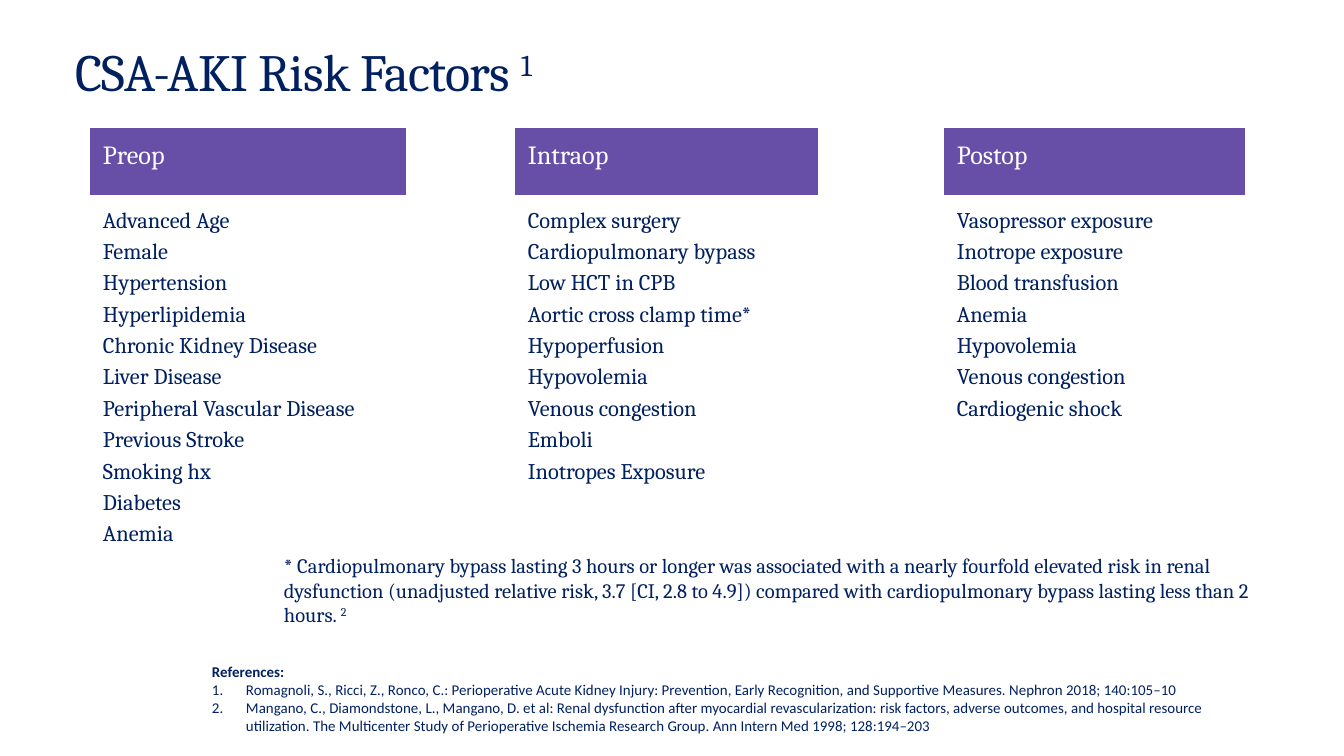
from lxml.etree import SubElement
from pptx import Presentation
from pptx.dml.color import RGBColor
from pptx.enum.text import MSO_ANCHOR
from pptx.oxml.ns import qn
from pptx.util import Pt

NAVY, PURPLE, WHITE = "002060", "674EA7", "FFFFFF"
SCALE = 914400 / 134.4
NO_STYLE = "{2D5ABB26-0587-4C30-8999-92F81FD0307C}"

TITLE = "CSA-AKI Risk Factors "
RISK_FACTORS = {
    "Preop": [
        "Advanced Age", "Female", "Hypertension", "Hyperlipidemia",
        "Chronic Kidney Disease", "Liver Disease", "Peripheral Vascular Disease",
        "Previous Stroke", "Smoking hx", "Diabetes", "Anemia",
    ],
    "Intraop": [
        "Complex surgery", "Cardiopulmonary bypass", "Low HCT in CPB",
        "Aortic cross clamp time*", "Hypoperfusion", "Hypovolemia",
        "Venous congestion", "Emboli", "Inotropes Exposure",
    ],
    "Postop": [
        "Vasopressor exposure", "Inotrope exposure", "Blood transfusion",
        "Anemia", "Hypovolemia", "Venous congestion", "Cardiogenic shock",
    ],
}
FOOTNOTE = (
    "* Cardiopulmonary bypass lasting 3 hours or longer was associated with a nearly "
    "fourfold elevated risk in renal dysfunction (unadjusted relative risk, 3.7 "
    "[CI, 2.8 to 4.9]) compared with cardiopulmonary bypass lasting less than 2 hours. "
)
REFERENCES = [
    "Romagnoli, S., Ricci, Z., Ronco, C.: Perioperative Acute Kidney Injury: Prevention, "
    "Early Recognition, and Supportive Measures. Nephron 2018; 140:105–10",
    "Mangano, C., Diamondstone, L., Mangano, D. et al: Renal dysfunction after myocardial "
    "revascularization: risk factors, adverse outcomes, and hospital resource utilization. "
    "The Multicenter Study of Perioperative Ischemia Research Group. "
    "Ann Intern Med 1998; 128:194–203",
]
COLUMN_WIDTHS = [316, 109, 303, 126, 301]
ROW_HEIGHTS = [65, 457]
TABLE_BOX = (90, 128, sum(COLUMN_WIDTHS), sum(ROW_HEIGHTS))


def px(length):
    return round(length * SCALE)


def color(value):
    return RGBColor.from_string(value)


def set_all(target, values):
    for name, value in values.items():
        setattr(target, name, value)


def set_margins(target, horizontal, vertical):
    set_all(target, {
        "margin_left": px(horizontal), "margin_right": px(horizontal),
        "margin_top": px(vertical), "margin_bottom": px(vertical),
    })


def add_run(paragraph, text, size, font="Cambria", fill=NAVY, bold=False, **attributes):
    run = paragraph.add_run()
    run.text = text
    set_all(run.font, {"size": Pt(size), "name": font, "bold": bold})
    run.font.color.rgb = color(fill)
    for name, value in attributes.items():
        run.font._element.set(name, value)


def add_text_box(slide, box, horizontal, vertical):
    frame = slide.shapes.add_textbox(*map(px, box)).text_frame
    frame.word_wrap = True
    set_margins(frame, horizontal, vertical)
    return frame


def number_paragraph(paragraph):
    properties = paragraph._p.get_or_add_pPr()
    properties.set("marL", str(px(34)))
    properties.set("indent", str(-px(34)))
    bullet_color = SubElement(properties, qn("a:buClr"))
    SubElement(bullet_color, qn("a:srgbClr"), val=NAVY)
    SubElement(properties, qn("a:buAutoNum"), type="arabicPeriod")


def add_risk_table(slide):
    table = slide.shapes.add_table(2, len(COLUMN_WIDTHS), *map(px, TABLE_BOX)).table
    set_all(table, {"first_row": False, "horz_banding": False})
    table._tbl.tblPr.find(qn("a:tableStyleId")).text = NO_STYLE
    for column, width in zip(table.columns, COLUMN_WIDTHS):
        column.width = px(width)
    for row, height in zip(table.rows, ROW_HEIGHTS):
        row.height = px(height)
    for cell in table.iter_cells():
        set_margins(cell, 13, 13)
        cell.fill.solid()
        cell.fill.fore_color.rgb = color(WHITE)
    for index, (phase, factors) in enumerate(RISK_FACTORS.items()):
        header, body = (table.cell(row, 2 * index) for row in range(2))
        header.fill.fore_color.rgb = color(PURPLE)
        add_run(header.text_frame.paragraphs[0], phase, 14, fill=WHITE)
        frame = body.text_frame
        for position, factor in enumerate(factors):
            paragraph = frame.add_paragraph() if position else frame.paragraphs[0]
            if position:
                paragraph.space_before = Pt(3)
            add_run(paragraph, factor, 12)


def add_title(slide):
    frame = add_text_box(slide, (67, 42, 1210, 66), 9, 5)
    frame.vertical_anchor = MSO_ANCHOR.BOTTOM
    paragraph = frame.paragraphs[0]
    paragraph.line_spacing = 0.9
    add_run(paragraph, TITLE, 28, spc="-40")
    add_run(paragraph, "1", 28, spc="-40", baseline="30000")


def add_footnote(slide):
    paragraph = add_text_box(slide, (271, 540, 1021, 94), 13, 13).paragraphs[0]
    add_run(paragraph, FOOTNOTE, 11)
    add_run(paragraph, "2", 11, baseline="30000")


def add_references(slide):
    frame = add_text_box(slide, (199, 656, 1059, 86), 13, 7)
    add_run(frame.paragraphs[0], "References:", 8, "Calibri", bold=True)
    for reference in REFERENCES:
        paragraph = frame.add_paragraph()
        number_paragraph(paragraph)
        add_run(paragraph, reference, 8, "Calibri")


def main():
    presentation = Presentation()
    set_all(presentation, {"slide_width": px(1344), "slide_height": px(756)})
    slide = presentation.slides.add_slide(presentation.slide_layouts[6])
    add_risk_table(slide)
    add_title(slide)
    add_footnote(slide)
    add_references(slide)
    presentation.save("out.pptx")


if __name__ == "__main__":
    main()
